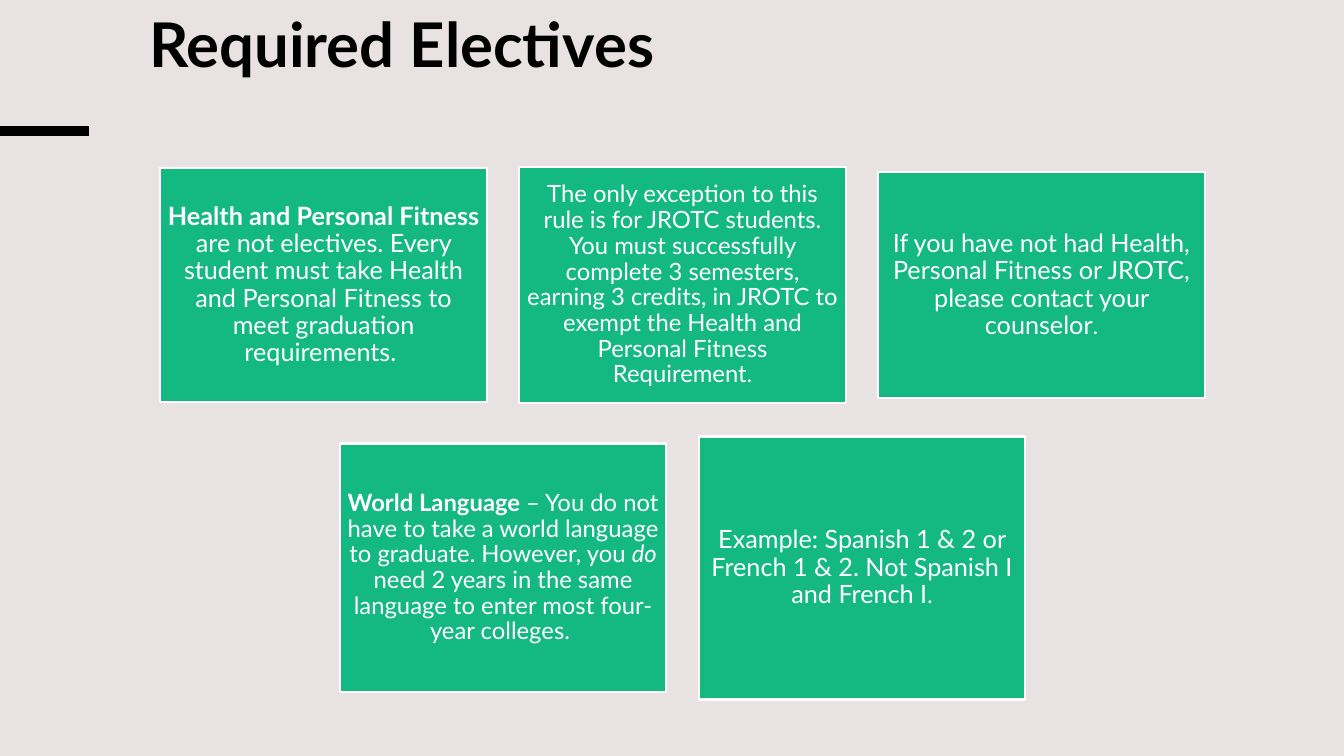
"""Build the Required Electives slide: a title above five centred cards."""
from dataclasses import dataclass

from lxml import etree
from pptx import Presentation
from pptx.dml.color import RGBColor
from pptx.enum.shapes import MSO_CONNECTOR, MSO_SHAPE
from pptx.enum.text import MSO_ANCHOR, PP_ALIGN
from pptx.oxml.ns import qn
from pptx.slide import Slide
from pptx.text.text import Font
from pptx.util import Inches, Pt

FONT = "Lato"
BACKGROUND, BLACK, WHITE, GREEN = "E8E2E2", "000000", "FFFFFF", "14B881"
CARD_WIDTH, CARD_PITCH = 3.24, 3.56
ROW_LEFTS = (1.59, 1.59 + CARD_PITCH / 2)
ROW_CENTRES = (2.83, 5.635)


@dataclass(frozen=True)
class Piece:
    text: str
    bold: bool | None = None
    italic: bool | None = None
    size: int | None = None


@dataclass(frozen=True)
class Card:
    row: int
    column: int
    height: float
    size: int
    pieces: tuple[Piece, ...]


FULL_STOP = Piece(".", size=16)
CARDS = (
    Card(0, 0, 2.32, 18, (
        Piece("Health and Personal Fitness ", bold=True),
        Piece("are not electives. Every student must take Health and Personal Fitness "
              "to meet graduation requirements. "),
    )),
    Card(0, 1, 2.34, 17, (
        Piece("The only exception to this rule is for JROTC students. You must successfully "
              "complete 3 semesters, earning 3 credits, in JROTC to exempt the Health and "
              "Personal Fitness Requirement"),
        FULL_STOP,
    )),
    Card(0, 2, 2.24, 18, (
        Piece("If you have not had Health, Personal Fitness or JROTC, "
              "please contact your counselor"),
        FULL_STOP,
    )),
    Card(1, 0, 2.47, 17, (
        Piece("World Language ", bold=True),
        Piece("– You do not have to take a world language to graduate. However, you "),
        Piece("do", italic=True),
        Piece(" need 2 years in the same language to enter most four-year colleges. "),
    )),
    Card(1, 1, 2.61, 18, (
        Piece("Example: Spanish 1 & 2 or French 1 & 2. Not Spanish I and French I"),
        FULL_STOP,
    )),
)


def colour(value: str) -> RGBColor:
    return RGBColor.from_string(value)


def set_font(font: Font, size: int, value: str) -> None:
    font.name = FONT
    font.size = Pt(size)
    font.color.rgb = colour(value)


def add_accent(slide: Slide) -> None:
    accent = slide.shapes.add_connector(
        MSO_CONNECTOR.STRAIGHT, Inches(0), Inches(1.3), Inches(0.88), Inches(1.3))
    accent.line.color.rgb = colour(BLACK)
    accent.line.width = Pt(6.75)
    etree.SubElement(accent._element.spPr, qn("a:effectLst"))


def add_title(slide: Slide, text: str) -> None:
    title = slide.shapes.add_textbox(Inches(1.38), Inches(0.12), Inches(10.78), Inches(0.98))
    title.text_frame.word_wrap = True
    paragraph = title.text_frame.paragraphs[0]
    paragraph.text = text
    paragraph.line_spacing = 0.85
    set_font(paragraph.font, 44, BLACK)
    paragraph.font.bold = True


def add_card(slide: Slide, card: Card) -> None:
    left = ROW_LEFTS[card.row] + card.column * CARD_PITCH
    top = ROW_CENTRES[card.row] - card.height / 2
    shape = slide.shapes.add_shape(
        MSO_SHAPE.RECTANGLE, Inches(left), Inches(top), Inches(CARD_WIDTH), Inches(card.height))
    shape.shadow.inherit = False
    shape.fill.solid()
    shape.fill.fore_color.rgb = colour(GREEN)
    shape.line.color.rgb = colour(WHITE)
    shape.line.width = Pt(1.5)

    frame = shape.text_frame
    frame.word_wrap = True
    frame.vertical_anchor = MSO_ANCHOR.MIDDLE
    frame.margin_left = frame.margin_right = Inches(0.07)
    frame.margin_top = frame.margin_bottom = Inches(0.07)
    paragraph = frame.paragraphs[0]
    paragraph.alignment = PP_ALIGN.CENTER
    paragraph.line_spacing = 0.9
    set_font(paragraph.font, card.size, WHITE)
    for piece in card.pieces:
        run = paragraph.add_run()
        run.text = piece.text
        run.font.bold = piece.bold
        run.font.italic = piece.italic
        if piece.size:
            run.font.size = Pt(piece.size)


def main() -> None:
    presentation = Presentation()
    presentation.slide_width = Inches(13.33)
    presentation.slide_height = Inches(7.5)
    slide = presentation.slides.add_slide(presentation.slide_layouts[6])
    slide.background.fill.solid()
    slide.background.fill.fore_color.rgb = colour(BACKGROUND)
    add_accent(slide)
    add_title(slide, "Required Electives")
    for card in CARDS:
        add_card(slide, card)
    presentation.save("out.pptx")


if __name__ == "__main__":
    main()
